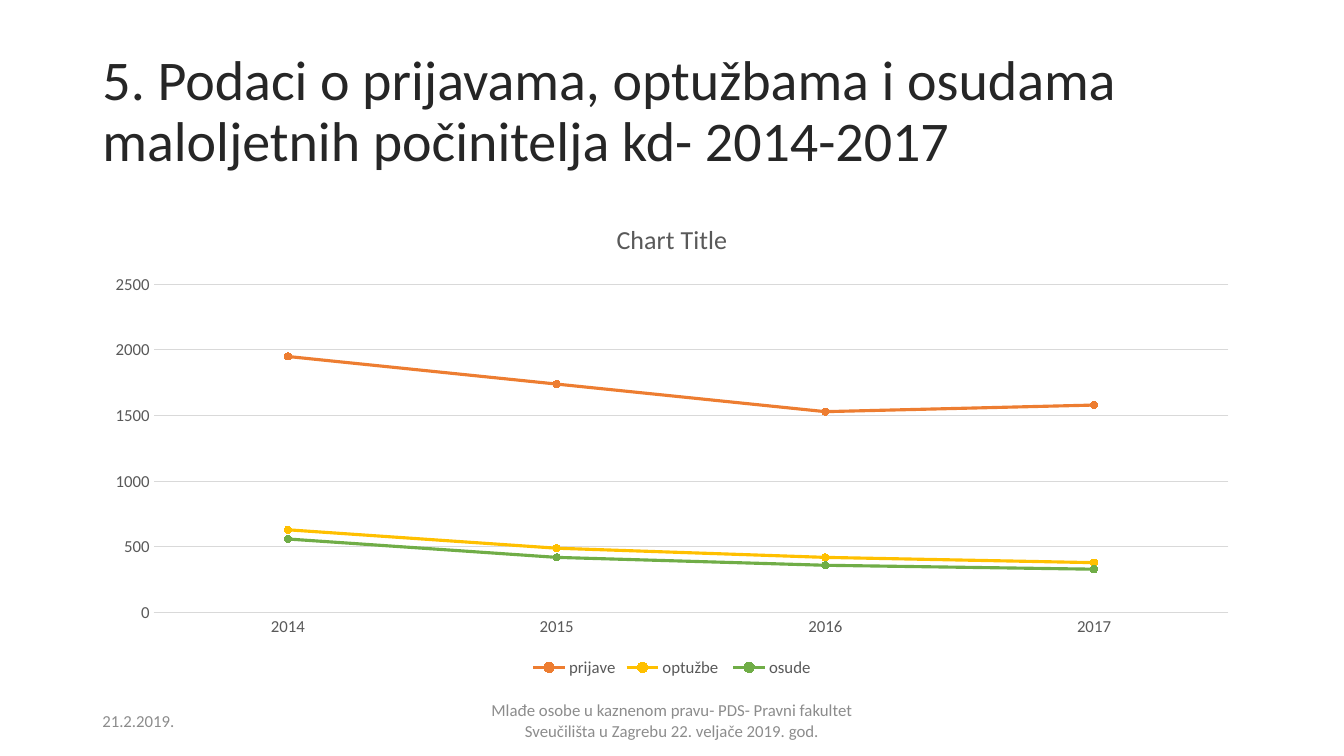
from pptx import Presentation
from pptx.chart.data import CategoryChartData
from pptx.dml.color import RGBColor
from pptx.enum.chart import XL_CHART_TYPE as Kind, XL_LEGEND_POSITION as Pos
from pptx.enum.chart import XL_MARKER_STYLE as Mark, XL_TICK_MARK as Tick
from pptx.enum.text import MSO_ANCHOR as Anchor, MSO_AUTO_SIZE as Auto, PP_ALIGN as Align
from pptx.util import Pt

PX = 9525
FACE = "Calibri"
DARK = RGBColor(0x26, 0x26, 0x26)
GREY = RGBColor(0x59, 0x59, 0x59)
PALE = RGBColor(0x8C, 0x8C, 0x8C)
RULE = RGBColor(0xD9, 0xD9, 0xD9)
ORANGE = RGBColor(0xED, 0x7D, 0x31)
GOLD = RGBColor(0xFF, 0xC0, 0x00)
GREEN = RGBColor(0x70, 0xAD, 0x47)
LEFT, WIDE = 88, 1104


def style(font, size, color):
    font.name, font.size, font.bold = FACE, Pt(size), False
    font.color.rgb = color


def fill(shape, text, size, color, align):
    """Put one centred-height paragraph of styled text in a shape."""
    frame = shape.text_frame
    frame.text = text
    frame.word_wrap = True
    frame.auto_size = Auto.NONE
    frame.vertical_anchor = Anchor.MIDDLE
    para = frame.paragraphs[0]
    para.alignment = align
    style(para.runs[0].font, size, color)
    return para


deck = Presentation()
deck.slide_width, deck.slide_height = 1280 * PX, 720 * PX
slide = deck.slides.add_slide(deck.slide_layouts[5])

title = slide.shapes.title
title.left, title.top = LEFT * PX, 38 * PX
title.width, title.height = WIDE * PX, 139 * PX
head = fill(title, "5. Podaci o prijavama, optužbama i osudama maloljetnih počinitelja kd- 2014-2017",
            40, DARK, Align.LEFT)
head.line_spacing = 0.9

series = [
    ("prijave", (1950, 1740, 1530, 1580), ORANGE),
    ("optužbe ", (630, 490, 420, 380), GOLD),
    ("osude", (560, 420, 360, 330), GREEN),
]
data = CategoryChartData()
data.categories = ["2014", "2015", "2016", "2017"]
for name, vals, _ in series:
    data.add_series(name, vals)
chart = slide.shapes.add_chart(Kind.LINE_MARKERS, LEFT * PX, 192 * PX,
                               WIDE * PX, 457 * PX, data).chart
style(chart.font, 12, GREY)

chart.has_title = True
label = chart.chart_title.text_frame
label.text = "Chart Title"
style(label.paragraphs[0].runs[0].font, 18.6, GREY)
chart.chart_title.include_in_layout = False

chart.has_legend = True
chart.legend.position = Pos.BOTTOM
chart.legend.include_in_layout = False
style(chart.legend.font, 12, GREY)

cats, scale = chart.category_axis, chart.value_axis
for axis in (cats, scale):
    axis.major_tick_mark = axis.minor_tick_mark = Tick.NONE
    style(axis.tick_labels.font, 12, GREY)
scale.minimum_scale, scale.maximum_scale, scale.major_unit = 0, 2500, 500
scale.has_major_gridlines = True
scale.format.line.fill.background()
for line in (cats.format.line, scale.major_gridlines.format.line):
    line.color.rgb = RULE
    line.width = Pt(0.75)

plot = chart.plots[0]
plot.vary_by_categories = False
for item, (_, _, color) in zip(plot.series, series):
    item.smooth = False
    item.format.line.color.rgb = color
    item.format.line.width = Pt(2.25)
    dot = item.marker
    dot.style, dot.size = Mark.CIRCLE, 5
    dot.format.fill.solid()
    dot.format.fill.fore_color.rgb = color
    dot.format.line.color.rgb = color

notes = [
    (LEFT, 288, "21.2.2019.", Align.LEFT),
    (424, 432, "Mlađe osobe u kaznenom pravu- PDS- Pravni fakultet "
     "Sveučilišta u Zagrebu 22. veljače 2019. god.", Align.CENTER),
]
for x, width, text, align in notes:
    box = slide.shapes.add_textbox(x * PX, 667 * PX, width * PX, 38 * PX)
    fill(box, text, 12, PALE, align)

deck.save("out.pptx")
